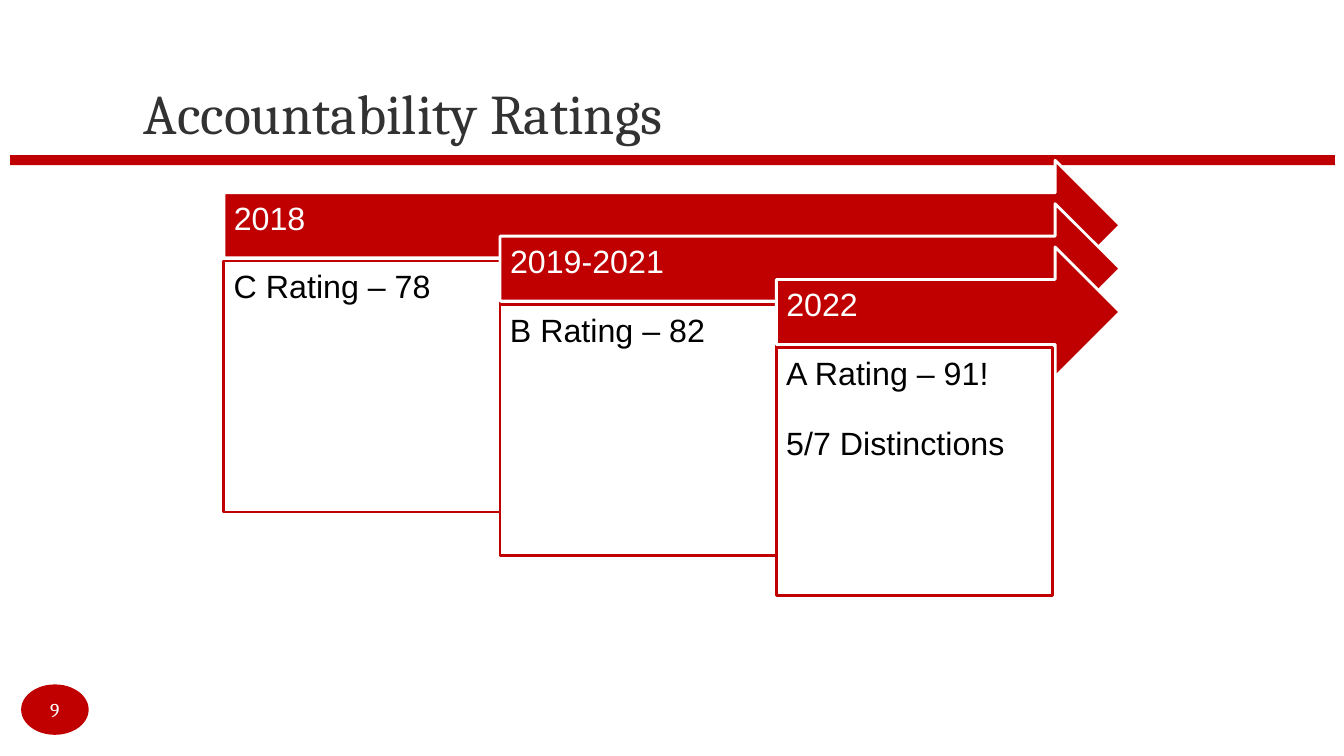
from pptx import Presentation
from pptx.dml.color import RGBColor
from pptx.enum.shapes import MSO_SHAPE
from pptx.enum.text import MSO_ANCHOR, PP_ALIGN
from pptx.util import Pt

PX = 9144
RED = RGBColor(0xC0, 0x00, 0x00)
WHITE = RGBColor(0xFF, 0xFF, 0xFF)
BLACK = RGBColor(0x00, 0x00, 0x00)
GREY = RGBColor(0x32, 0x32, 0x32)
STAGES = [
    ("2018", ["C Rating – 78"], 249),
    ("2019-2021", ["B Rating – 82"], 249),
    ("2022", ["A Rating – 91!", "5/7 Distinctions"], 246),
]


def scale(box):
    """Turn px lengths into EMU."""
    return [n * PX for n in box]


def write(shape, lines, size, face, color, pads, anchor, align=PP_ALIGN.LEFT, pitch=1.0):
    """Fill a shape with styled lines of text."""
    frame = shape.text_frame
    left, top, right, foot = scale(pads)
    look = {"word_wrap": True, "vertical_anchor": anchor, "margin_left": left,
            "margin_top": top, "margin_right": right, "margin_bottom": foot}
    for key, value in look.items():
        setattr(frame, key, value)
    for i, line in enumerate(lines):
        para = frame.add_paragraph() if i else frame.paragraphs[0]
        para.alignment = align
        para.line_spacing = pitch
        if i:
            para.space_before = Pt(25)
        run = para.add_run()
        run.text = line
        for key, value in {"size": Pt(size), "name": face}.items():
            setattr(run.font, key, value)
        run.font.color.rgb = color


def block(slide, kind, box, fill, edge=None):
    """Add a flat shape with an optional outline."""
    shape = slide.shapes.add_shape(kind, *scale(box))
    shape.shadow.inherit = False
    shape.fill.solid()
    shape.fill.fore_color.rgb = fill
    if edge is None:
        shape.line.fill.background()
    else:
        shape.line.color.rgb = edge
        shape.line.width = Pt(2)
    return shape


def header(slide, x, y, wide, high):
    """Place the title above its red rule."""
    block(slide, MSO_SHAPE.RECTANGLE, (x, y + high - 10, wide, 10), RED)
    title = slide.shapes.add_textbox(*scale((x + 123, y, 1133, high - 9)))
    write(title, ["Accountability Ratings"], 40, "Cambria", GREY,
          (10, 5, 10, 10), MSO_ANCHOR.BOTTOM)


def badge(slide, x, y, wide, high):
    """Place the page number in an oval."""
    oval = block(slide, MSO_SHAPE.OVAL, (x, y, wide, high), RED)
    write(oval, ["9"], 14, "Cambria", WHITE, (0, 0, 0, 0),
          MSO_ANCHOR.MIDDLE, PP_ALIGN.CENTER)


def steps(slide, x, y, wide):
    """Place the stepped arrows, each with a panel below."""
    for i, (year, notes, high) in enumerate(STAGES):
        left, top = x + 274 * i, y + 43 * i
        arrow = block(slide, MSO_SHAPE.RIGHT_ARROW,
                      (left, top, x + wide - left, 129), RED, WHITE)
        write(arrow, [year], 23, "Arial", WHITE, (10, 10, 28, 21),
              MSO_ANCHOR.MIDDLE, pitch=0.9)
        panel = block(slide, MSO_SHAPE.RECTANGLE,
                      (left, top + 100, 274, high), WHITE, RED)
        write(panel, notes, 23, "Arial", BLACK, (10, 10, 10, 10),
              MSO_ANCHOR.TOP, pitch=0.9)


def main():
    """Build and save the slide."""
    deck = Presentation()
    deck.slide_width, deck.slide_height = scale((1333, 750))
    slide = deck.slides.add_slide(deck.slide_layouts[6])
    header(slide, 10, 30, 1314, 134)
    badge(slide, 21, 679, 67, 50)
    steps(slide, 222, 159, 889)
    deck.save("out.pptx")


if __name__ == "__main__":
    main()
